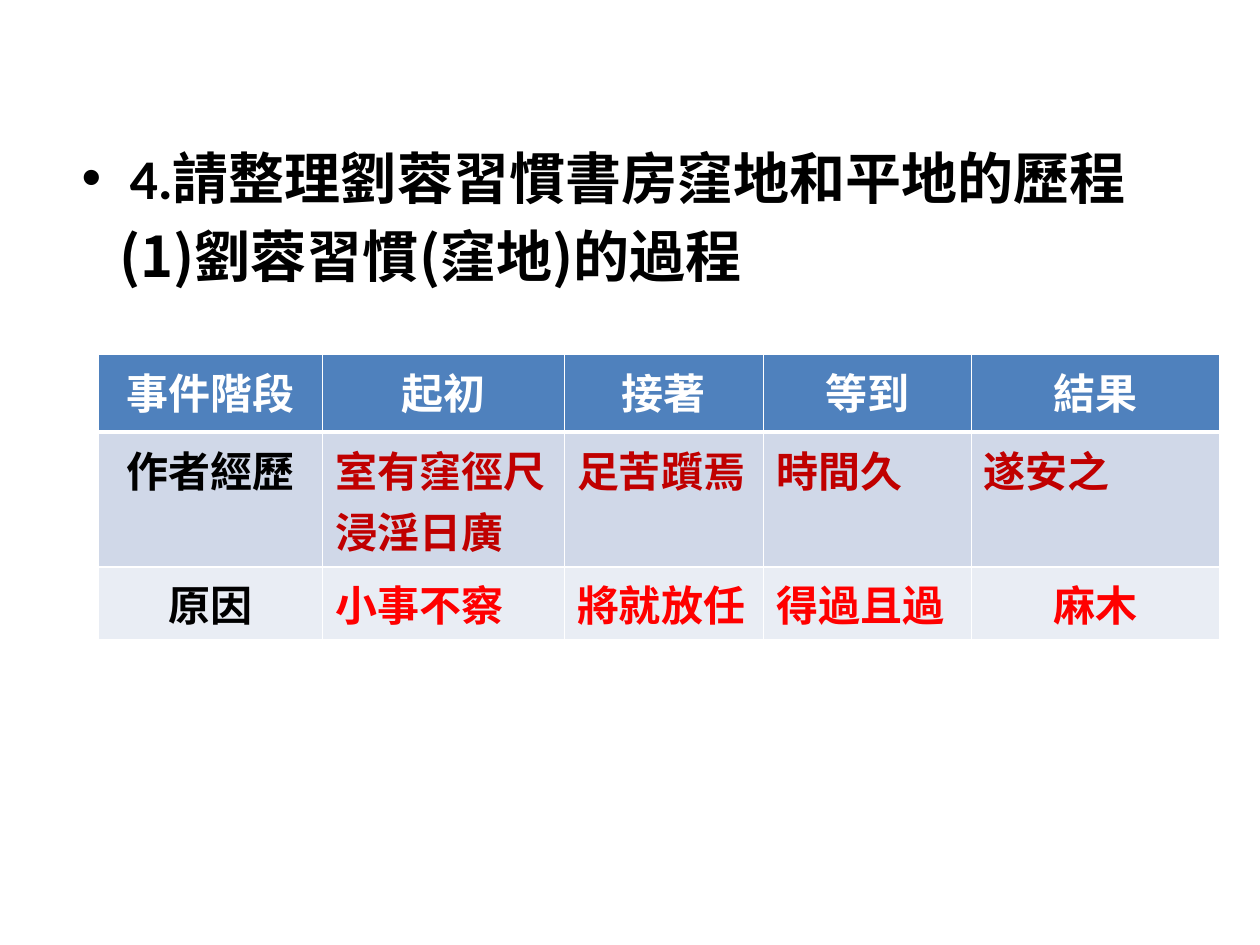
from dataclasses import dataclass

from lxml.etree import SubElement
from pptx import Presentation
from pptx.dml.color import RGBColor
from pptx.enum.text import PP_ALIGN
from pptx.oxml.ns import qn
from pptx.util import Inches, Pt


@dataclass(frozen=True)
class Theme:
    """Colours, fonts and type sizes of the slide."""
    white: str = "FFFFFF"
    black: str = "000000"
    dark_red: str = "C00000"
    red: str = "FF0000"
    header_fill: str = "4F81BD"
    row_fills: tuple = ("D0D8E8", "E9EDF4")
    heading_font: str = "Calibri"
    label_font: str = "Arial"
    chinese_font: str = "Noto Sans CJK SC"
    heading_size: int = 32
    table_size: int = 24


THEME = Theme()
HEADINGS = ["事件階段", "起初", "接著", "等到", "結果"]
EXPERIENCES = ["作者經歷", "室有窪徑尺\n浸淫日廣", "足苦躓焉", "時間久", "遂安之"]
REASONS = ["原因", "小事不察", "將就放任", "得過且過", "麻木"]
COLUMN_WIDTHS = [1.78, 1.92, 1.58, 1.65, 1.97]
ROW_HEIGHTS = [0.62, 1.07, 0.58]


def style_paragraph(paragraph, font_name, size, color):
    """Set the bold Latin and East Asian type of a paragraph."""
    font = paragraph.font
    font.name, font.size, font.bold = font_name, Pt(size), True
    font.color.rgb = RGBColor.from_string(color)
    properties = paragraph._p.pPr.find(qn("a:defRPr"))
    SubElement(properties, qn("a:ea"), typeface=THEME.chinese_font)


def indent_paragraph(paragraph, margin, bullet=None):
    """Indent a paragraph, hanging its bullet when it has one."""
    properties = paragraph._p.get_or_add_pPr()
    properties.set("marL", str(Inches(margin)))
    properties.set("indent", str(Inches(-margin if bullet else 0)))
    if bullet:
        SubElement(properties, qn("a:buFont"), typeface=THEME.label_font)
        SubElement(properties, qn("a:buChar"), char=bullet)
    else:
        SubElement(properties, qn("a:buNone"))


def add_question(slide):
    """Add the question and its first part."""
    box = slide.shapes.add_textbox(Inches(0.55), Inches(1.09), Inches(9), Inches(1.5))
    frame = box.text_frame
    frame.word_wrap = True
    question, part = frame.paragraphs[0], frame.add_paragraph()
    question.text = "4.請整理劉蓉習慣書房窪地和平地的歷程"
    part.text = "(1)劉蓉習慣(窪地)的過程"
    indent_paragraph(question, 0.38, "•")
    indent_paragraph(part, 0.3)
    part.space_before = Pt(6)
    style_paragraph(question, THEME.heading_font, THEME.heading_size, THEME.black)
    style_paragraph(part, THEME.chinese_font, THEME.heading_size, THEME.black)


def add_borders(cell, top, bottom):
    """Draw the white borders of a cell with the given top and bottom widths."""
    properties = cell._tc.get_or_add_tcPr()
    for side, width in (("L", 1), ("R", 1), ("T", top), ("B", bottom)):
        line = SubElement(properties, qn(f"a:ln{side}"), w=str(Pt(width)))
        fill = SubElement(line, qn("a:solidFill"))
        SubElement(fill, qn("a:srgbClr"), val=THEME.white)


def fill_cell(cell, text, fill, font_name, color, centered):
    """Write a cell's text and colour its background."""
    cell.fill.solid()
    cell.fill.fore_color.rgb = RGBColor.from_string(fill)
    cell.text = text
    for paragraph in cell.text_frame.paragraphs:
        paragraph.alignment = PP_ALIGN.CENTER if centered else PP_ALIGN.LEFT
        style_paragraph(paragraph, font_name, THEME.table_size, color)


def add_stage_table(slide):
    """Add the table of stages, experiences and reasons."""
    table = slide.shapes.add_table(
        len(ROW_HEIGHTS), len(COLUMN_WIDTHS), Inches(0.78), Inches(2.81),
        Inches(sum(COLUMN_WIDTHS)), Inches(sum(ROW_HEIGHTS))).table
    for column, width in zip(table.columns, COLUMN_WIDTHS):
        column.width = Inches(width)
    for row, height in zip(table.rows, ROW_HEIGHTS):
        row.height = Inches(height)
    rows = [
        (HEADINGS, THEME.header_fill, THEME.white),
        (EXPERIENCES, THEME.row_fills[0], THEME.dark_red),
        (REASONS, THEME.row_fills[1], THEME.red),
    ]
    for row_index, (texts, fill, color) in enumerate(rows):
        for column_index, text in enumerate(texts):
            cell = table.cell(row_index, column_index)
            is_header = row_index == 0
            is_label = is_header or column_index == 0
            text_color = THEME.black if is_label and not is_header else color
            font_name = THEME.label_font if is_label else THEME.chinese_font
            add_borders(cell, 3 if row_index == 1 else 1, 3 if is_header else 1)
            fill_cell(cell, text, fill, font_name, text_color, is_label or text == "麻木")


def main():
    """Build and save the slide."""
    deck = Presentation()
    deck.slide_width, deck.slide_height = Inches(10), Inches(7.5)
    page = deck.slides.add_slide(deck.slide_layouts[6])
    add_question(page)
    add_stage_table(page)
    deck.save("out.pptx")


if __name__ == "__main__":
    main()
